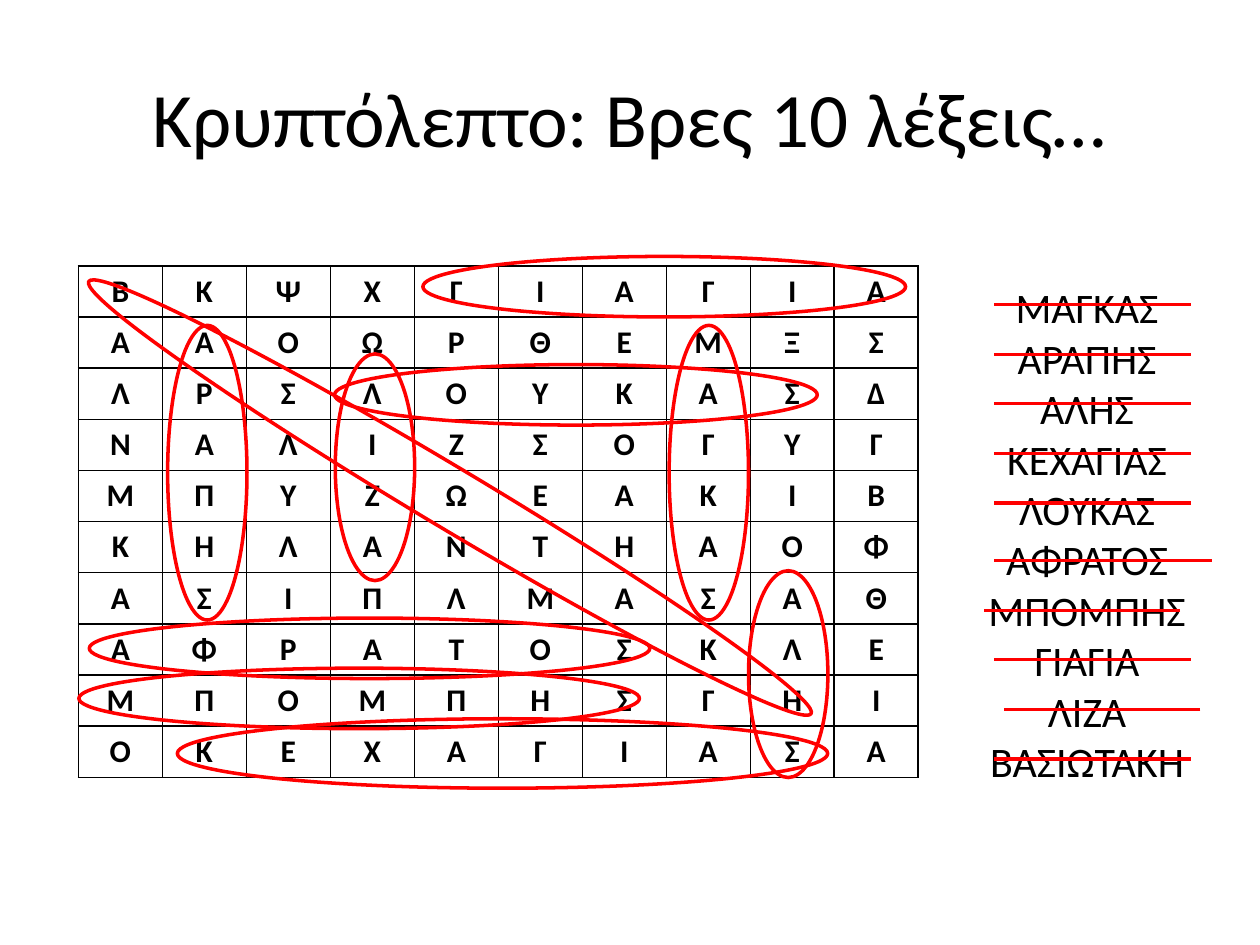
from lxml import etree
from pptx import Presentation
from pptx.dml.color import RGBColor
from pptx.enum.shapes import MSO_CONNECTOR, MSO_SHAPE
from pptx.enum.text import MSO_ANCHOR, PP_ALIGN
from pptx.oxml.ns import qn
from pptx.util import Cm, Pt

ELLIPSE = MSO_SHAPE.OVAL
STRAIGHT = MSO_CONNECTOR.STRAIGHT
CENTER = PP_ALIGN.CENTER
MIDDLE = MSO_ANCHOR.MIDDLE

FONT = "Calibri"
COLORS = {"text": "000000", "border": "000000", "mark": "FF0000"}
TITLE = "Κρυπτόλεπτο: Βρες 10 λέξεις…"
TITLE_BOX = (1.27, 0.76, 22.86, 3.18)
GRID_BOX = (1.58, 5.36, 16.93, 10.31)
LIST_BOX = (19.63, 5.56, 4.57, 10.52)

LETTERS = [
    "ΒΚΨΧΓΙΑΓΙΑ",
    "ΑΑΟΩΡΘΕΜΞΣ",
    "ΛΡΣΛΟΥΚΑΣΔ",
    "ΝΑΛΙΖΣΟΓΥΓ",
    "ΜΠΥΖΩΕΑΚΙΒ",
    "ΚΗΛΑΝΤΗΑΟΦ",
    "ΑΣΙΠΛΜΑΣΑΘ",
    "ΑΦΡΑΤΟΣΚΛΕ",
    "ΜΠΟΜΠΗΣΓΗΙ",
    "ΟΚΕΧΑΓΙΑΣΑ",
]

# word, loop centre x and y, loop thickness and length, angle, strike offsets
WORDS = [
    ("ΜΑΓΚΑΣ", 12.71, 4.17, 1.6, 5.94, 0, [0.41]),
    ("ΑΡΑΠΗΣ", 2.6, 4.17, 1.6, 5.94, 0, [0.41]),
    ("ΑΛΗΣ", 14.31, 8.23, 1.6, 4.17, 0, [0.41]),
    ("ΚΕΧΑΓΙΑΣ", 8.55, 9.83, 1.4, 13.11, 90, [0.41]),
    ("ΛΟΥΚΑΣ", 10.03, 2.6, 1.22, 9.73, 90, [0.41]),
    ("ΑΦΡΑΤΟΣ", 5.87, 7.71, 1.22, 11.3, 90, [0.41, 0.84]),
    ("ΜΠΟΜΠΗΣ", 5.66, 8.72, 1.22, 11.3, 90, [0.2]),
    ("ΓΙΑΓΙΑ", 11.81, 0.42, 1.22, 9.73, 90, [0.41]),
    ("ΛΙΖΑ", 5.98, 4.06, 1.6, 4.57, 0, [0.61]),
    ("ΒΑΣΙΩΤΑΚΗ", 7.49, 4.67, 1.22, 16.97, 120.9, [0.41]),
]
STRIKE_LENGTH = 3.96
STRIKE_TOP = 0.58
STRIKE_PITCH = 1.0
LOWER_HALF_SHIFT = 0.16


def color(name):
    return RGBColor.from_string(COLORS[name])


def write(paragraph, text, size, bold=False):
    paragraph.alignment = CENTER
    run = paragraph.add_run()
    run.text = text
    run.font.name = FONT
    run.font.size = Pt(size)
    run.font.bold = bold
    run.font.color.rgb = color("text")


def add_borders(cell):
    properties = cell._tc.get_or_add_tcPr()
    for position, side in enumerate(("a:lnL", "a:lnR", "a:lnT", "a:lnB")):
        line = etree.Element(qn(side), w=str(Pt(1)))
        fill = etree.SubElement(line, qn("a:solidFill"))
        etree.SubElement(fill, qn("a:srgbClr"), val=COLORS["border"])
        properties.insert(position, line)


def add_title(slide, box):
    title = slide.shapes.title
    title.left, title.top, title.width, title.height = map(Cm, box)
    title.text_frame.vertical_anchor = MIDDLE
    write(title.text_frame.paragraphs[0], TITLE, 44)


def add_letter_grid(slide, box):
    _, _, width, height = box
    rows, columns = len(LETTERS), len(LETTERS[0])
    table = slide.shapes.add_table(rows, columns, *map(Cm, box)).table
    table.first_row = False
    table.horz_banding = False
    for column in table.columns:
        column.width = Cm(width / columns)
    for row, letters in zip(table.rows, LETTERS):
        row.height = Cm(height / rows)
        for cell, letter in zip(row.cells, letters):
            cell.fill.background()
            add_borders(cell)
            write(cell.text_frame.paragraphs[0], letter, 18, bold=True)


def add_word_loops(slide, box):
    left, top, _, _ = box
    for _, x, y, thickness, length, angle, _ in WORDS:
        loop = slide.shapes.add_shape(
            ELLIPSE,
            Cm(left + x - thickness / 2),
            Cm(top + y - length / 2),
            Cm(thickness),
            Cm(length),
        )
        loop.rotation = angle
        loop.shadow.inherit = False
        loop.fill.background()
        loop.line.color.rgb = color("mark")
        loop.line.width = Pt(2)


def add_strike(slide, left, y):
    strike = slide.shapes.add_connector(
        STRAIGHT, Cm(left + STRIKE_LENGTH), Cm(y), Cm(left), Cm(y)
    )
    strike.line.color.rgb = color("mark")
    strike.line.width = Pt(1.75)
    etree.SubElement(strike._element.spPr, qn("a:effectLst"))


def add_word_list(slide, box):
    left, top, _, _ = box
    text_frame = slide.shapes.add_textbox(*map(Cm, box)).text_frame
    text_frame.word_wrap = True
    for index, (word, *_, offsets) in enumerate(WORDS):
        paragraph = text_frame.add_paragraph() if index else text_frame.paragraphs[0]
        write(paragraph, word, 24)
        y = top + STRIKE_TOP + index * STRIKE_PITCH
        if index >= len(WORDS) // 2:
            y += LOWER_HALF_SHIFT
        for offset in offsets:
            add_strike(slide, left + offset, y)


def main():
    presentation = Presentation()
    presentation.slide_width = Cm(25.4)
    presentation.slide_height = Cm(19.05)
    slide = presentation.slides.add_slide(presentation.slide_layouts[5])
    add_title(slide, TITLE_BOX)
    add_letter_grid(slide, GRID_BOX)
    add_word_list(slide, LIST_BOX)
    add_word_loops(slide, GRID_BOX)
    presentation.save("out.pptx")


if __name__ == "__main__":
    main()
